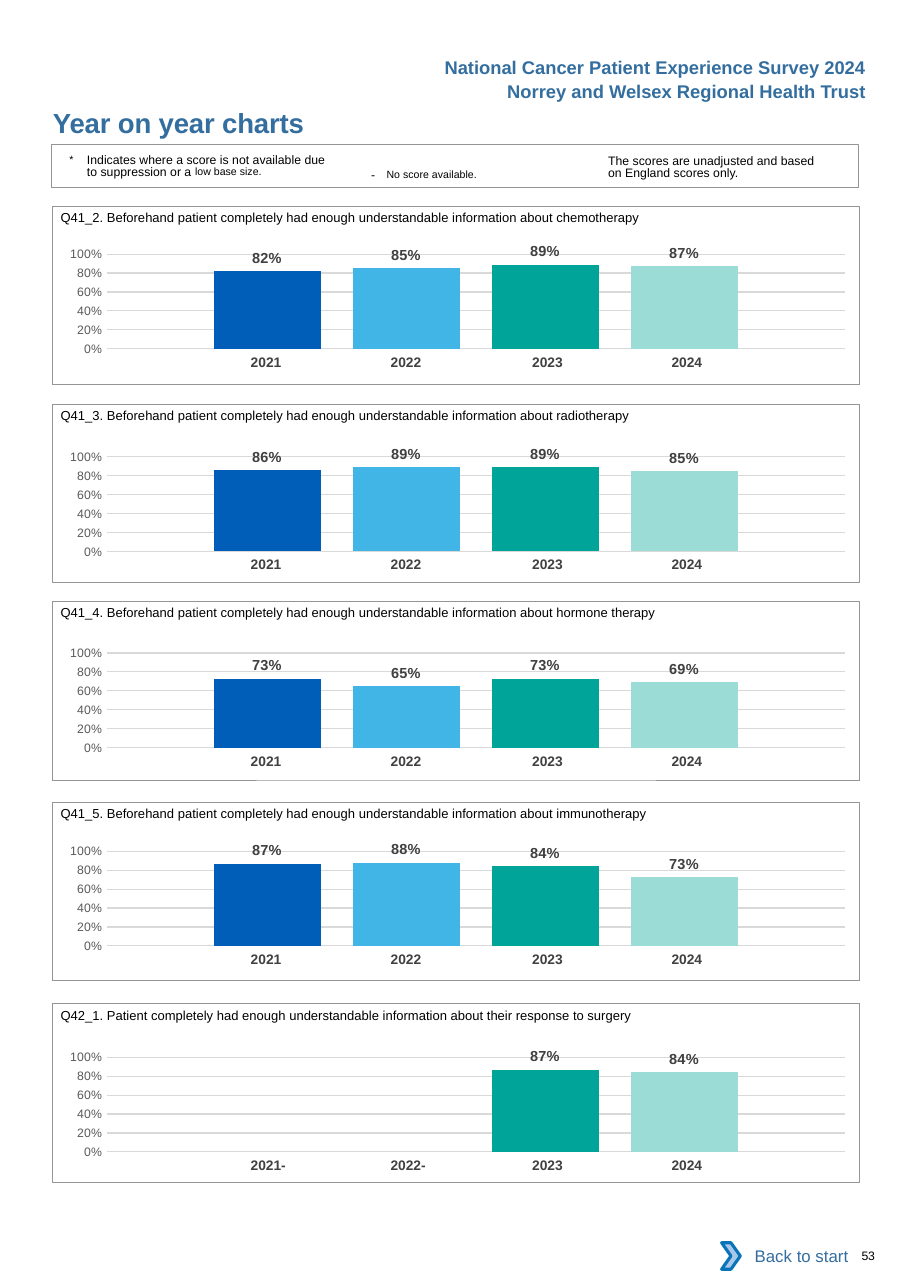
import dataclasses
from typing import Optional

import pptx
import pptx.chart.data
import pptx.dml.color
import pptx.enum.chart
import pptx.enum.shapes
import pptx.enum.text
import pptx.oxml
import pptx.oxml.ns
import pptx.util

# The grid has square cells of a tenth of an inch
CELL = 0.1
PAGE_COLUMNS, PAGE_ROWS = 82.6, 116.9
FRAME_LEFT, FRAME_WIDTH, FRAME_HEIGHT = 4.8, 73.2, 16.2
COLORS = {
    "heading": "336E9F", "text": "000000", "frame": "939598", "year": "414042",
    "score": "404040", "axis": "595959", "grid": "D9D9D9", "white": "FFFFFF",
    "arrow_fill": "A8C7E9", "arrow_line": "0A74BB",
}
NO_TABLE_STYLE = "{2D5ABB26-0587-4C30-8999-92F81FD0307C}"
PLOT_AREA = {"x": 0.079, "y": 0.145, "w": 0.915, "h": 0.666}
ALIGN = pptx.enum.text.PP_ALIGN
ANCHOR = pptx.enum.text.MSO_ANCHOR
SHAPES = pptx.enum.shapes.MSO_SHAPE
qn = pptx.oxml.ns.qn


@dataclasses.dataclass
class Span:
    text: str
    size: float = 8
    color: str = "text"
    bold: bool = False
    raised: int = 0
    spacing: float = 0


@dataclasses.dataclass
class Year:
    name: str
    color: str
    columns: float
    right_margin: float


@dataclasses.dataclass
class Panel:
    question: str
    frame_row: float
    chart_row: float
    scores: tuple[Optional[float], ...]


YEARS = [
    Year("2021", "005EB8", 12.7, 0),
    Year("2022", "41B6E6", 12.7, 0),
    Year("2023", "00A499", 13.4, 0.4),
    Year("2024", "9CDCD7", 12.7, 1.2),
]
BEFOREHAND = "Beforehand patient completely had enough understandable information about"
PANELS = [
    Panel(f"Q41_2. {BEFOREHAND} chemotherapy", 18.7, 21.2, (0.82, 0.85, 0.89, 0.87)),
    Panel(f"Q41_3. {BEFOREHAND} radiotherapy", 36.7, 39.6, (0.86, 0.89, 0.89, 0.85)),
    Panel(f"Q41_4. {BEFOREHAND} hormone therapy", 54.6, 57.4, (0.73, 0.65, 0.73, 0.69)),
    Panel(f"Q41_5. {BEFOREHAND} immunotherapy", 72.8, 75.4, (0.87, 0.88, 0.84, 0.73)),
    Panel("Q42_1. Patient completely had enough understandable information about "
          "their response to surgery", 91.1, 94.1, (None, None, 0.87, 0.84)),
]


def cells(count: float) -> int:
    return pptx.util.Inches(count * CELL)


def box(left: float, top: float, width: float, height: float) -> tuple[int, ...]:
    return tuple(cells(count) for count in (left, top, width, height))


def rgb(color: str) -> pptx.dml.color.RGBColor:
    return pptx.dml.color.RGBColor.from_string(COLORS.get(color, color))


def style_font(font, size: float, color: str, bold: bool = False) -> None:
    font.name, font.size, font.bold = "Arial", pptx.util.Pt(size), bold
    font.color.rgb = rgb(color)


def write(text_frame, spans: list[Span], align=ALIGN.LEFT, anchor=ANCHOR.TOP,
          margins: tuple[float, ...] = (0, 0, 0, 0)):
    """Fill a text frame; margins are left, top, right, bottom in cells."""
    text_frame.word_wrap = True
    text_frame.auto_size = pptx.enum.text.MSO_AUTO_SIZE.NONE
    text_frame.vertical_anchor = anchor
    (text_frame.margin_left, text_frame.margin_top,
     text_frame.margin_right, text_frame.margin_bottom) = map(cells, margins)
    text_frame.text = spans[0].text
    paragraph = text_frame.paragraphs[0]
    paragraph.alignment = align
    for span in spans[1:]:
        paragraph.add_run().text = span.text
    for run, span in zip(paragraph.runs, spans):
        style_font(run.font, span.size, span.color, span.bold)
        properties = run.font._element
        if span.raised:
            properties.set("baseline", str(span.raised * 1000))
        if span.spacing:
            properties.set("spc", str(round(span.spacing * 100)))
    return paragraph


def add_text(slide, place: tuple[int, ...], spans: list[Span], **layout):
    return write(slide.shapes.add_textbox(*place).text_frame, spans, **layout)


def add_box(slide, place: tuple[int, ...], preset=SHAPES.RECTANGLE, fill: str = "",
            line: str = "", line_width: float = 0.5):
    shape = slide.shapes.add_shape(preset, *place)
    shape.shadow.inherit = False
    if fill:
        shape.fill.solid()
        shape.fill.fore_color.rgb = rgb(fill)
    else:
        shape.fill.background()
    if line:
        shape.line.color.rgb = rgb(line)
        shape.line.width = pptx.util.Pt(line_width)
    else:
        shape.line.fill.background()
    return shape


def add_year_table(slide, panel: Panel) -> None:
    place = box(17.3, panel.chart_row + 10.5, sum(year.columns for year in YEARS), 2.7)
    table = slide.shapes.add_table(1, len(YEARS), *place).table
    table.first_row = table.horz_banding = False
    table._tbl.tblPr.find(qn("a:tableStyleId")).text = NO_TABLE_STYLE
    for index, (year, score) in enumerate(zip(YEARS, panel.scores)):
        table.columns[index].width = cells(year.columns)
        cell = table.cell(0, index)
        cell.fill.background()
        missing = score is None
        cell.margin_left, cell.margin_right = cells(1.4 if missing else 1), cells(year.right_margin)
        cell.margin_top = cell.margin_bottom = cells(0.5)
        cell.text_frame.text = year.name + ("-" if missing else "")
        paragraph = cell.text_frame.paragraphs[0]
        paragraph.alignment = ALIGN.CENTER
        style_font(paragraph.runs[0].font, 9, "year", bold=True)


def add_score_chart(slide, panel: Panel) -> None:
    data = pptx.chart.data.CategoryChartData(number_format="0%")
    data.categories = ["1"]
    for number, score in enumerate(panel.scores, start=1):
        data.add_series(f"Series {number}", [score])
    chart = slide.shapes.add_chart(pptx.enum.chart.XL_CHART_TYPE.COLUMN_CLUSTERED,
                                   *box(3.9, panel.chart_row, 73.2, 12.9), data).chart
    chart.has_legend = chart.has_title = False
    chart.font.name, chart.font.size = "Calibri", pptx.util.Pt(10)
    chart.font.color.rgb = rgb("text")

    # Axes
    chart.category_axis.visible = False
    axis = chart.value_axis
    axis.minimum_scale, axis.maximum_scale, axis.major_unit = 0, 1, 0.2
    axis.major_tick_mark = axis.minor_tick_mark = pptx.enum.chart.XL_TICK_MARK.NONE
    axis.format.line.fill.background()
    axis.major_gridlines.format.line.color.rgb = rgb("grid")
    axis.major_gridlines.format.line.width = pptx.util.Pt(0.75)
    axis.tick_labels.number_format, axis.tick_labels.number_format_is_linked = "0%", False
    style_font(axis.tick_labels.font, 8, "axis")

    # Columns and their labels
    plot = chart.plots[0]
    plot.gap_width, plot.overlap, plot.vary_by_categories = 200, -30, False
    for series, year in zip(plot.series, YEARS):
        series.invert_if_negative = False
        series.format.fill.solid()
        series.format.fill.fore_color.rgb = rgb(year.color)
        labels = series.data_labels
        labels.show_value = True
        labels.position = pptx.enum.chart.XL_LABEL_POSITION.OUTSIDE_END
        labels.number_format, labels.number_format_is_linked = "0%", False
        style_font(labels.font, 9.5, "score", bold=True)

    # Fixed inner plot area
    plot_area = chart._chartSpace.chart.plotArea
    for existing in plot_area.findall(qn("c:layout")):
        plot_area.remove(existing)
    settings = {"layoutTarget": "inner", "xMode": "edge", "yMode": "edge", **PLOT_AREA}
    content = "".join(f'<c:{tag} val="{value}"/>' for tag, value in settings.items())
    plot_area.insert(0, pptx.oxml.parse_xml(
        f'<c:layout {pptx.oxml.ns.nsdecls("c")}><c:manualLayout>{content}</c:manualLayout></c:layout>'))


def add_header(slide) -> None:
    title = slide.shapes.title
    title.left, title.top, title.width, title.height = box(4.8, 9.6, 45, 3)
    write(title.text_frame, [Span("Year on year charts", 18, "heading", True, spacing=-0.1)])
    for row, text in ((4.6, "National Cancer Patient Experience Survey 2024"),
                      (6.8, "Norrey and Welsex Regional Health Trust")):
        add_text(slide, box(34.6, row, 45, 3), [Span(text, 12, "heading", True)],
                 align=ALIGN.RIGHT, margins=(1, 0.5, 1, 0.5))


def add_score_notes(slide) -> None:
    unadjusted = add_text(slide, box(55.2, 13.8, 19.5, 2.7), margins=(0, 0.3, 0, 0), spans=[
        Span("The scores are unadjusted and based on England scores only.")])
    add_text(slide, box(32.7, 14.1, 18.3, 2.4), margins=(1, 0.5, 1, 0.5), spans=[
        Span("- ", spacing=2.6), Span("No score available.", 12, raised=3)])
    suppressed = add_text(slide, box(6.3, 13.8, 24, 2.7), margins=(0, 0.3, 0, 0), spans=[
        Span("*\t", 12, raised=3),
        Span("Indicates where a score is not available due to suppression or a "),
        Span("low base size.", 12, raised=7)])
    suppressed._p.get_or_add_pPr().set("marL", str(cells(1.6)))
    suppressed._p.get_or_add_pPr().set("indent", str(-cells(1.6)))
    for paragraph in (unadjusted, suppressed):
        paragraph.line_spacing = pptx.util.Pt(8.1)
    add_box(slide, box(4.7, 13.1, FRAME_WIDTH, 3.9), line="frame", line_width=0.75)


def add_panel(slide, panel: Panel) -> None:
    add_year_table(slide, panel)
    add_score_chart(slide, panel)
    add_text(slide, box(5.5, panel.frame_row - 0.6, 72, 2.4), [Span(panel.question, 8.5)],
             margins=(0, 0.9, 0, 0))
    add_box(slide, box(FRAME_LEFT, panel.frame_row, FRAME_WIDTH, FRAME_HEIGHT), line="frame")


def add_footer(slide) -> None:
    back = add_box(slide, box(66.2, 111.9, 11.8, 4.2), fill="white")
    write(back.text_frame, [Span("Back to start", 11, "heading")], align=ALIGN.RIGHT,
          anchor=ANCHOR.MIDDLE, margins=(1, 0.5, 1, 0.5))
    add_box(slide, box(65.5, 112.8, 1.7, 2.4), SHAPES.CHEVRON, "arrow_fill", "arrow_line", 2)
    add_text(slide, box(78.2, 113.3, 4, 1.3), [Span("53", spacing=-0.2)])


def main() -> None:
    presentation = pptx.Presentation()
    presentation.slide_width, presentation.slide_height = cells(PAGE_COLUMNS), cells(PAGE_ROWS)
    slide = presentation.slides.add_slide(presentation.slide_layouts[5])
    add_header(slide)
    add_score_notes(slide)
    for panel in PANELS:
        add_panel(slide, panel)
    add_footer(slide)
    presentation.save("out.pptx")


if __name__ == "__main__":
    main()
